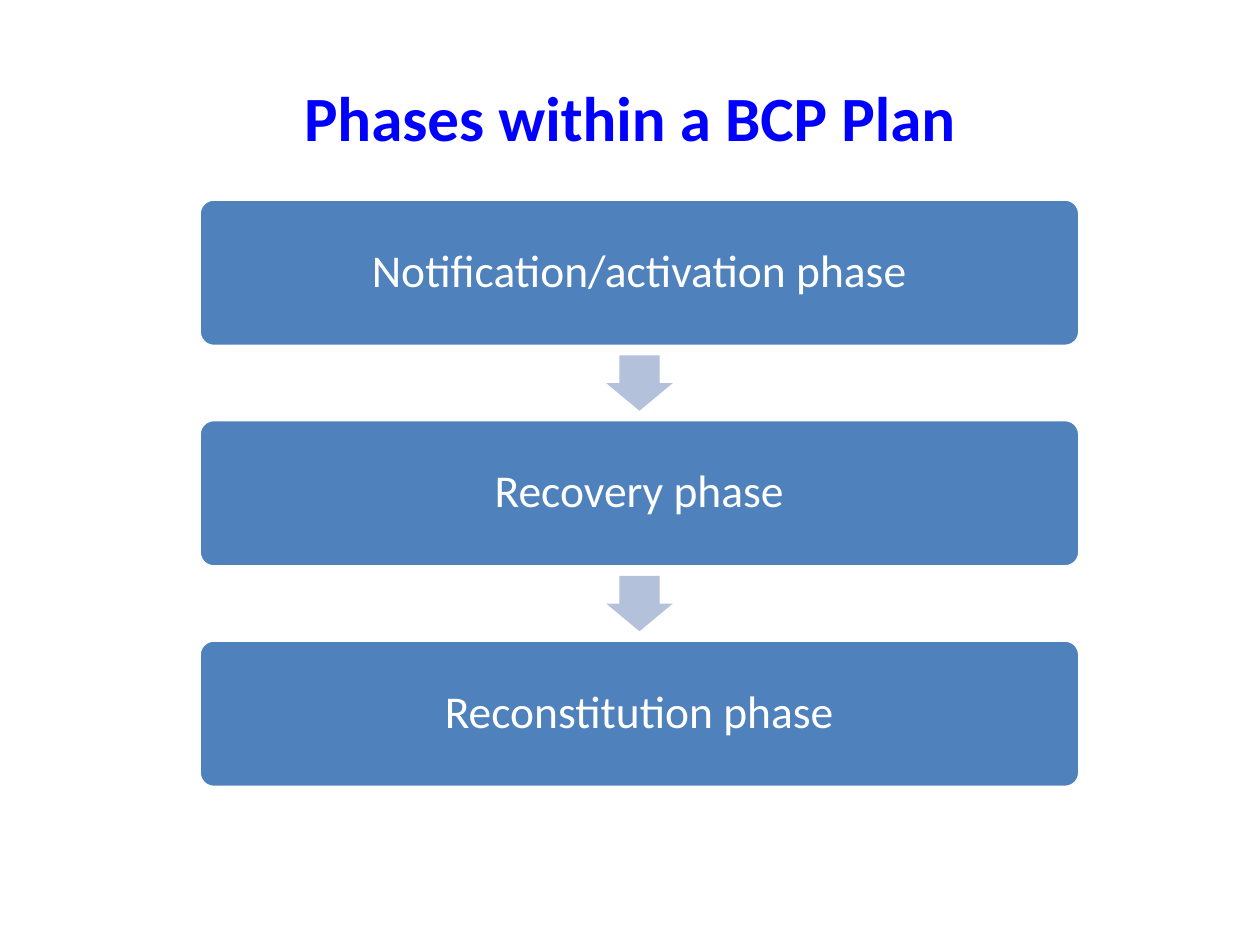
from pptx import Presentation
from pptx.dml.color import RGBColor
from pptx.enum.shapes import MSO_SHAPE as Kind
from pptx.enum.text import MSO_ANCHOR as Anchor, PP_ALIGN as Align
from pptx.util import Inches, Pt

BLUE = RGBColor(0x00, 0x00, 0xFF)
STEEL = RGBColor(0x4F, 0x81, 0xBD)
PALE = RGBColor(0xB3, 0xC1, 0xDB)
WHITE = RGBColor(0xFF, 0xFF, 0xFF)
PHASES = ["Notification/activation phase", "Recovery phase", "Reconstitution phase"]


def write(shape, text, size, color, bold=False, space=1.0, inset=0.1):
    """Write centred text into a shape."""
    frame = shape.text_frame
    frame.word_wrap = True
    frame.vertical_anchor = Anchor.MIDDLE
    frame.margin_left = frame.margin_right = Inches(inset)
    frame.margin_top = frame.margin_bottom = Inches(inset / 2)
    frame.text = text
    para = frame.paragraphs[0]
    para.alignment = Align.CENTER
    para.line_spacing = space
    font = para.runs[0].font
    font.name, font.size, font.bold = "Calibri", Pt(size), bold
    font.color.rgb = color


def add_title(slide, left, top, width, height):
    """Place the title placeholder in its box."""
    title = slide.shapes.title
    title.left, title.top = Inches(left), Inches(top)
    title.width, title.height = Inches(width), Inches(height)
    write(title, "Phases within a BCP Plan", 36, BLUE, bold=True)


def add_part(group, kind, left, top, width, height, fill):
    """Add one flat filled shape to the group."""
    part = group.shapes.add_shape(
        kind, Inches(left), Inches(top), Inches(width), Inches(height))
    part.shadow.inherit = False
    part.fill.solid()
    part.fill.fore_color.rgb = fill
    part.line.fill.background()
    return part


def add_flow(slide, left, top, width, height, phases):
    """Stack the phases in the box with an arrow in each gap."""
    group = slide.shapes.add_group_shape()
    gap = 0.58
    tall = (height - gap * (len(phases) - 1)) / len(phases)
    long, wide = 0.44, 0.53
    for i, phase in enumerate(phases):
        y = top + i * (tall + gap)
        if i:
            arrow = add_part(group, Kind.RIGHT_ARROW, left + (width - long) / 2,
                             y - (gap + wide) / 2, long, wide, PALE)
            arrow.rotation = 90
            arrow.adjustments[0] = 0.6
            arrow.adjustments[1] = 0.5
        box = add_part(group, Kind.ROUNDED_RECTANGLE, left, y, width, tall, STEEL)
        box.adjustments[0] = 0.1
        box.line.color.rgb = WHITE
        box.line.width = Pt(2)
        write(box, phase, 26, WHITE, space=0.9, inset=0.15)


def main():
    """Build and save the slide."""
    deck = Presentation()
    deck.slide_width, deck.slide_height = Inches(10), Inches(7.5)
    slide = deck.slides.add_slide(deck.slide_layouts[5])
    add_title(slide, 0.5, 0.3, 9, 1.25)
    add_flow(slide, 1.58, 1.58, 6.99, 4.67, PHASES)
    deck.save("out.pptx")


if __name__ == "__main__":
    main()
